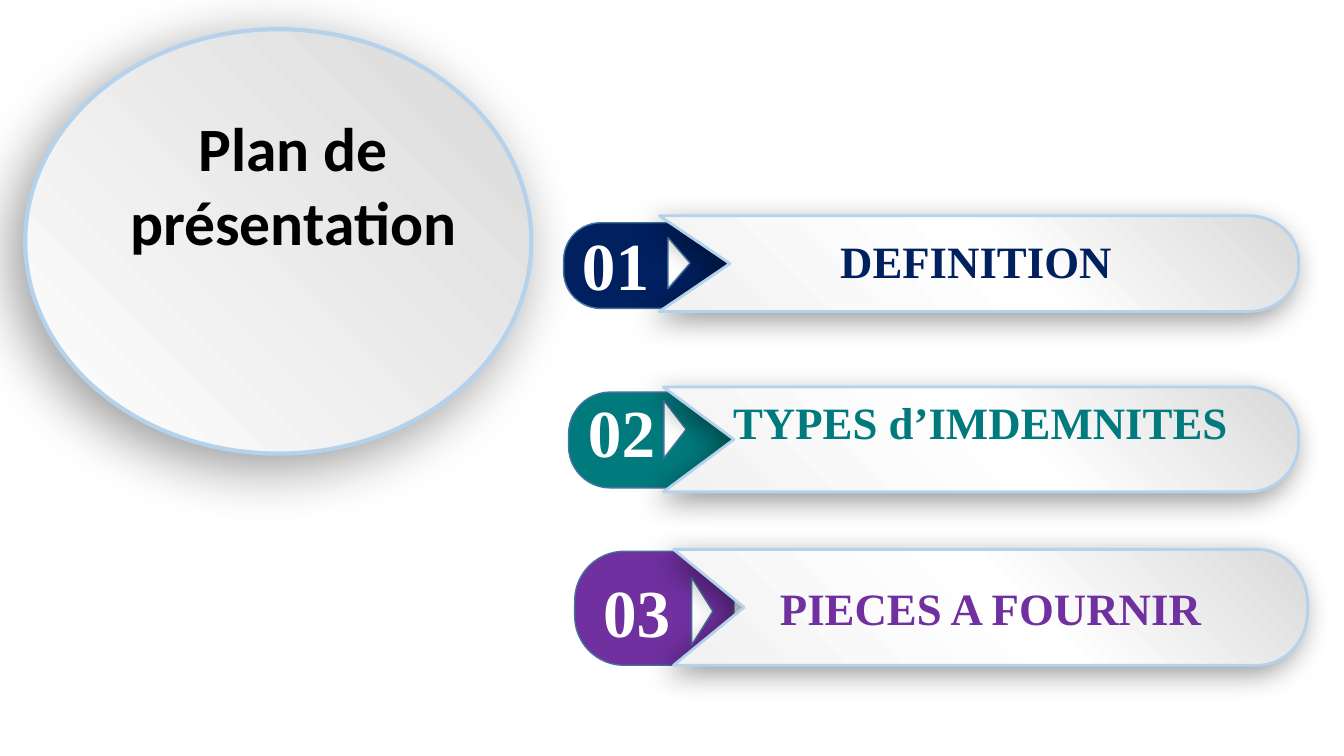
from dataclasses import dataclass
from math import cos, pi, sin

from lxml import etree
from pptx import Presentation
from pptx.dml.color import RGBColor
from pptx.enum.shapes import MSO_SHAPE
from pptx.enum.text import MSO_ANCHOR, PP_ALIGN
from pptx.oxml.ns import qn
from pptx.util import Inches, Pt

ROUNDED, TRIANGLE, OVAL = MSO_SHAPE.ROUNDED_RECTANGLE, MSO_SHAPE.ISOSCELES_TRIANGLE, MSO_SHAPE.OVAL
CENTER, TOP = PP_ALIGN.CENTER, MSO_ANCHOR.TOP
TITLE_ONLY = 5

WHITE = RGBColor(0xFF, 0xFF, 0xFF)
BLACK = RGBColor(0x00, 0x00, 0x00)
NAVY = RGBColor(0x00, 0x20, 0x60)
TEAL = RGBColor(0x00, 0x7A, 0x7D)
PURPLE = RGBColor(0x70, 0x30, 0xA0)
EDGE_BLUE = RGBColor(0x43, 0x73, 0x9E)
PALE_BLUE = RGBColor(0xB5, 0xD2, 0xEC)
LIGHT_GREY = RGBColor(0xF2, 0xF2, 0xF2)
GREY = RGBColor(0xD9, 0xD9, 0xD9)

BANNER_STOPS = [(0, LIGHT_GREY), (54, WHITE), (100, GREY)]
OVAL_STOPS = [(0, WHITE), (100, GREY)]
NOTCH, END_RADIUS, END_FLAT = 0.70, 0.50, 0.07
ARC_STEPS = 16

Box = tuple[float, float, float, float]


@dataclass(frozen=True)
class Entry:
    number: str
    label: str
    color: RGBColor
    tab: Box
    number_box: Box
    arrow: Box
    banner: Box
    label_box: Box


ENTRIES = [
    Entry("01", "DEFINITION", NAVY, (5.59, 2.21, 1.62, 0.85), (5.48, 2.17, 1.25, 0.91),
          (6.48, 2.5, 0.51, 0.22), (6.54, 2.14, 6.34, 0.95), (6.59, 2.27, 6.18, 0.64)),
    Entry("02", "TYPES d’IMDEMNITES", TEAL, (5.64, 3.89, 1.63, 0.95), (5.53, 3.82, 1.27, 0.91),
          (6.41, 4.15, 0.57, 0.22), (6.58, 3.84, 6.3, 1.04), (6.97, 3.87, 5.51, 0.64)),
    Entry("03", "PIECES A FOURNIR", PURPLE, (5.7, 5.47, 1.58, 1.13), (5.7, 5.61, 1.23, 0.91),
          (6.63, 5.96, 0.67, 0.21), (6.68, 5.45, 6.29, 1.15), (6.68, 5.71, 6.29, 0.64)),
]


def write_text(shape, text: str, *, size: int, color: RGBColor, font: str) -> None:
    frame = shape.text_frame
    frame.word_wrap = True
    frame.vertical_anchor = TOP
    frame.text = text
    for paragraph in frame.paragraphs:
        paragraph.alignment = CENTER
        paragraph.line_spacing = 1.0
        paragraph.space_before = Pt(0)
        for run in paragraph.runs:
            run.font.size, run.font.bold, run.font.name = Pt(size), True, font
            run.font.color.rgb = color


def add_text(slide, box: Box, text: str, **style) -> None:
    write_text(slide.shapes.add_textbox(*map(Inches, box)), text, **style)


def set_line(shape, color: RGBColor, width: float) -> None:
    shape.line.color.rgb = color
    shape.line.width = Pt(width)


def add_flat(slide, kind, box: Box, color: RGBColor):
    shape = slide.shapes.add_shape(kind, *map(Inches, box))
    shape.shadow.inherit = False
    shape.fill.solid()
    shape.fill.fore_color.rgb = color
    set_line(shape, EDGE_BLUE, 1)
    return shape


def add_color(parent, color: RGBColor):
    return etree.SubElement(parent, qn("a:srgbClr"), val=str(color))


def shade(shape, stops, line_width: float, blur: float, distance: float) -> None:
    """Give a shape a diagonal gradient, a pale edge and a soft shadow."""
    shape.shadow.inherit = False
    set_line(shape, PALE_BLUE, line_width)
    shape.fill.gradient()
    gradient = shape.element.spPr.find(qn("a:gradFill"))
    for child in list(gradient):
        gradient.remove(child)
    stop_list = etree.SubElement(gradient, qn("a:gsLst"))
    for position, color in stops:
        add_color(etree.SubElement(stop_list, qn("a:gs"), pos=str(position * 1000)), color)
    etree.SubElement(gradient, qn("a:lin"), ang=str(315 * 60000), scaled="0")

    effects = shape.element.spPr.find(qn("a:effectLst"))
    shadow = etree.SubElement(effects, qn("a:outerShdw"), blurRad=str(Pt(blur)),
                              dist=str(Pt(distance)), dir=str(135 * 60000), rotWithShape="0")
    etree.SubElement(add_color(shadow, BLACK), qn("a:alpha"), val="40000")


def add_banner(slide, box: Box) -> None:
    """Draw a bar with a notched left end and a rounded right end."""
    left, top, width, height = box
    bottom, center_x = top + height, left + width - END_RADIUS
    radius_y = (height - END_FLAT) / 2
    angles = [step * pi / 2 / ARC_STEPS for step in range(ARC_STEPS + 1)]
    upper = [(center_x + END_RADIUS * sin(a), top + radius_y * (1 - cos(a))) for a in angles]
    lower = [(x, top + bottom - y) for x, y in reversed(upper)]
    points = upper + lower + [(left, bottom), (left + NOTCH, top + height / 2)]
    builder = slide.shapes.build_freeform(Inches(left), Inches(top))
    builder.add_line_segments([(Inches(x), Inches(y)) for x, y in points], close=True)
    shade(builder.convert_to_shape(), BANNER_STOPS, 2, blur=20, distance=7)


def add_entry(slide, entry: Entry) -> None:
    tab = add_flat(slide, ROUNDED, entry.tab, entry.color)
    tab.adjustments[0] = 0.433
    add_text(slide, entry.number_box, entry.number, size=48, color=WHITE, font="Times New Roman")
    add_flat(slide, TRIANGLE, entry.arrow, WHITE).rotation = 90
    add_banner(slide, entry.banner)
    add_text(slide, entry.label_box, entry.label, size=32, color=entry.color, font="Times New Roman")


def add_title(slide) -> None:
    oval = slide.shapes.add_shape(OVAL, *map(Inches, (0.25, 0.29, 5.02, 4.21)))
    shade(oval, OVAL_STOPS, 3, blur=42, distance=12)
    title = slide.shapes.title
    title.left, title.top, title.width, title.height = map(Inches, (0.96, 1.04, 3.9, 1.58))
    write_text(title, "Plan de\nprésentation", size=44, color=BLACK, font="Calibri")
    oval.element.addnext(title.element)  # the title stands in front of its oval


def main() -> None:
    presentation = Presentation()
    presentation.slide_width, presentation.slide_height = Inches(13.33), Inches(7.5)
    slide = presentation.slides.add_slide(presentation.slide_layouts[TITLE_ONLY])
    add_title(slide)
    for entry in ENTRIES:
        add_entry(slide, entry)
    presentation.save("out.pptx")


if __name__ == "__main__":
    main()
